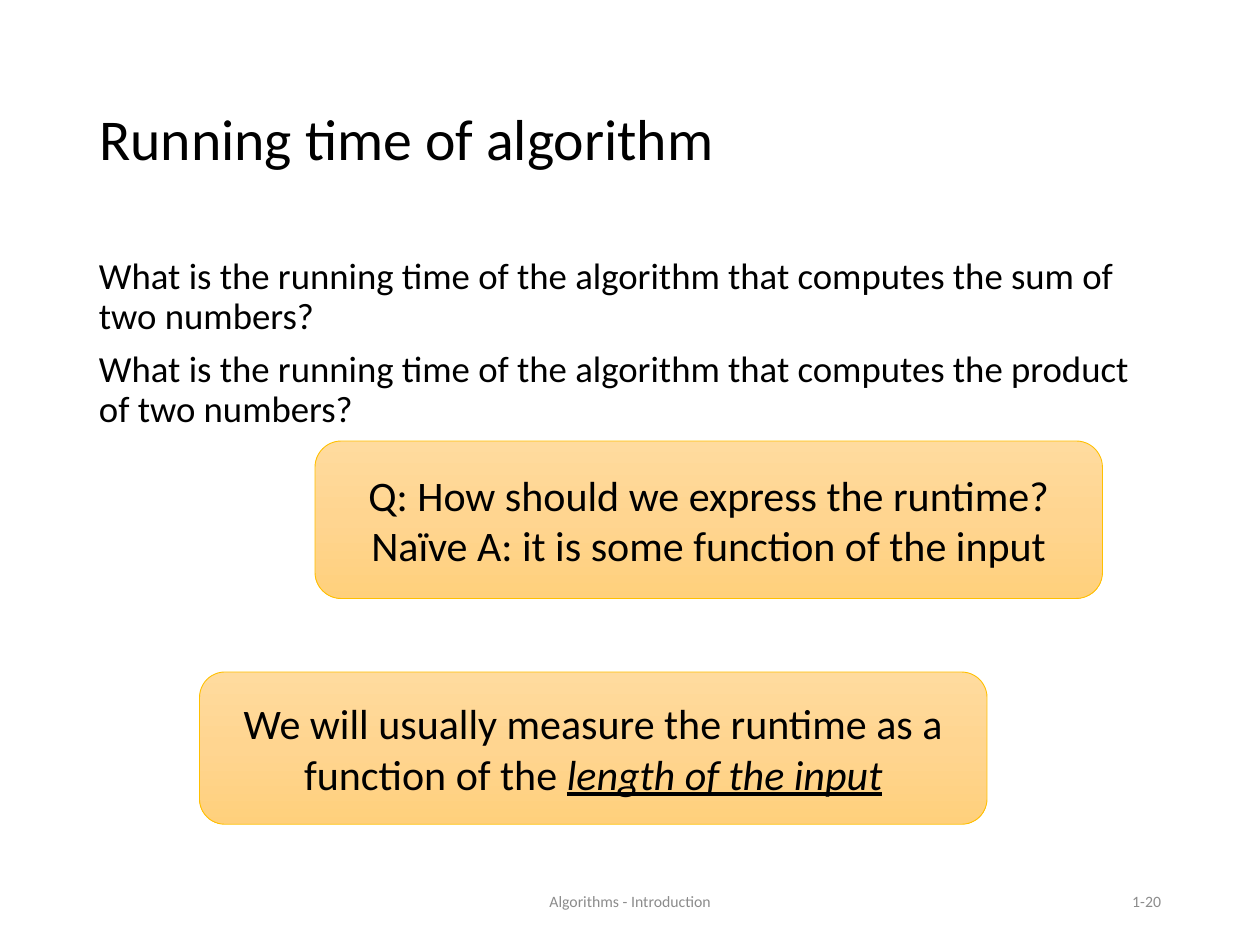
import copy
from dataclasses import dataclass

import pptx
import pptx.dml.color
import pptx.enum.shapes
import pptx.enum.text
import pptx.oxml.ns
import pptx.util

Pt = pptx.util.Pt
Align = pptx.enum.text.PP_ALIGN
Anchor = pptx.enum.text.MSO_ANCHOR

FONT = "Calibri"
BLACK = "000000"
GRAY = "8C8C8C"
GOLD = "FFC000"
CALLOUT_GRADIENT = ("FFDB9E", "FFD590", "FFD07C")
MARGIN = 49.5
CONTENT_WIDTH = 621
FOOTER_TOP = 500.5
FOOTER_HEIGHT = 28.75


@dataclass(frozen=True)
class Box:
    left: float
    top: float
    width: float
    height: float


@dataclass(frozen=True)
class TextStyle:
    size: float
    color: str = BLACK
    alignment: Align = Align.LEFT
    anchor: Anchor = Anchor.MIDDLE
    line_spacing: float = 1.0
    space_before: float = 0


@dataclass(frozen=True)
class Label:
    box: Box
    paragraphs: tuple[str, ...]
    style: TextStyle


@dataclass(frozen=True)
class Callout:
    box: Box
    paragraphs: tuple[str, ...]
    emphasis: str = ""


TITLE = Label(
    Box(MARGIN, 28.75, CONTENT_WIDTH, 104.5),
    ("Running time of algorithm",),
    TextStyle(33, line_spacing=0.9),
)
LABELS = (
    Label(
        Box(MARGIN, 144, CONTENT_WIDTH, 342.75),
        (
            "What is the running time of the algorithm that computes the sum of two numbers?",
            "What is the running time of the algorithm that computes the product of two numbers?",
        ),
        TextStyle(21, anchor=Anchor.TOP, line_spacing=0.9, space_before=7.5),
    ),
    Label(
        Box(238.5, FOOTER_TOP, 243, FOOTER_HEIGHT),
        ("Algorithms - Introduction",),
        TextStyle(9, GRAY, Align.CENTER),
    ),
    Label(
        Box(508.5, FOOTER_TOP, 162, FOOTER_HEIGHT),
        ("1-20",),
        TextStyle(9, GRAY, Align.RIGHT),
    ),
)
CALLOUT_STYLE = TextStyle(24, alignment=Align.CENTER)
CALLOUTS = (
    Callout(
        Box(180, 252, 450, 90),
        (
            "Q: How should we express the runtime?",
            "Naïve A: it is some function of the input",
        ),
    ),
    Callout(
        Box(114, 384, 450, 87),
        ("We will usually measure the runtime as a function of the ",),
        "length of the input",
    ),
)


def rgb(color: str) -> pptx.dml.color.RGBColor:
    return pptx.dml.color.RGBColor.from_string(color)


def lengths(box: Box) -> tuple[pptx.util.Length, ...]:
    return Pt(box.left), Pt(box.top), Pt(box.width), Pt(box.height)


def write_text(shape, paragraphs: tuple[str, ...], style: TextStyle) -> None:
    frame = shape.text_frame
    frame.text = "\n".join(paragraphs)
    frame.word_wrap = True
    frame.auto_size = pptx.enum.text.MSO_AUTO_SIZE.NONE
    frame.vertical_anchor = style.anchor
    for paragraph in frame.paragraphs:
        paragraph.alignment = style.alignment
        paragraph.line_spacing = style.line_spacing
        paragraph.space_before = Pt(style.space_before)
        paragraph.font.name = FONT
        paragraph.font.size = Pt(style.size)
        paragraph.font.color.rgb = rgb(style.color)


def draw_title(slide, label: Label) -> None:
    title = slide.shapes.title
    title.left, title.top, title.width, title.height = lengths(label.box)
    write_text(title, label.paragraphs, label.style)


def draw_label(slide, label: Label) -> None:
    shape = slide.shapes.add_textbox(*lengths(label.box))
    write_text(shape, label.paragraphs, label.style)


def fill_gradient(shape, colors: tuple[str, ...]) -> None:
    shape.fill.gradient()
    shape.fill.gradient_angle = 270
    stop_list = shape._element.spPr.find(".//" + pptx.oxml.ns.qn("a:gsLst"))
    stop_list.insert(1, copy.deepcopy(stop_list[0]))
    for index, (stop, color) in enumerate(zip(shape.fill.gradient_stops, colors)):
        stop.position = index / (len(colors) - 1)
        stop.color.rgb = rgb(color)


def draw_callout(slide, callout: Callout) -> None:
    shape = slide.shapes.add_shape(
        pptx.enum.shapes.MSO_SHAPE.ROUNDED_RECTANGLE, *lengths(callout.box)
    )
    shape.shadow.inherit = False
    fill_gradient(shape, CALLOUT_GRADIENT)
    shape.line.color.rgb = rgb(GOLD)
    shape.line.width = Pt(0.5)
    write_text(shape, callout.paragraphs, CALLOUT_STYLE)
    if callout.emphasis:
        run = shape.text_frame.paragraphs[-1].add_run()
        run.text = callout.emphasis
        run.font.italic = True
        run.font.underline = True


def main() -> None:
    presentation = pptx.Presentation()
    presentation.slide_width = Pt(720)
    presentation.slide_height = Pt(540)
    slide = presentation.slides.add_slide(presentation.slide_layouts[5])
    draw_title(slide, TITLE)
    for label in LABELS:
        draw_label(slide, label)
    for callout in CALLOUTS:
        draw_callout(slide, callout)
    presentation.save("out.pptx")


if __name__ == "__main__":
    main()
